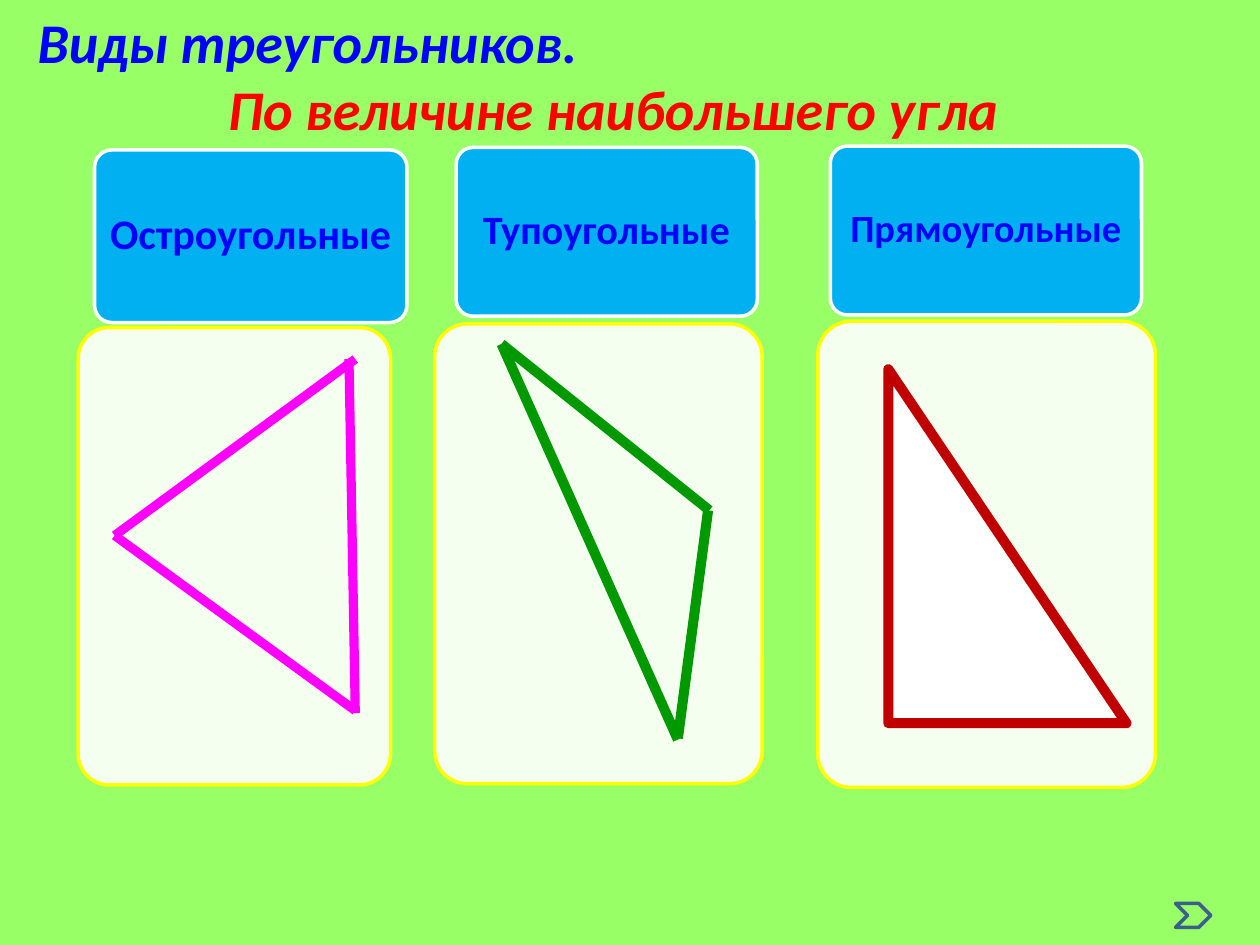
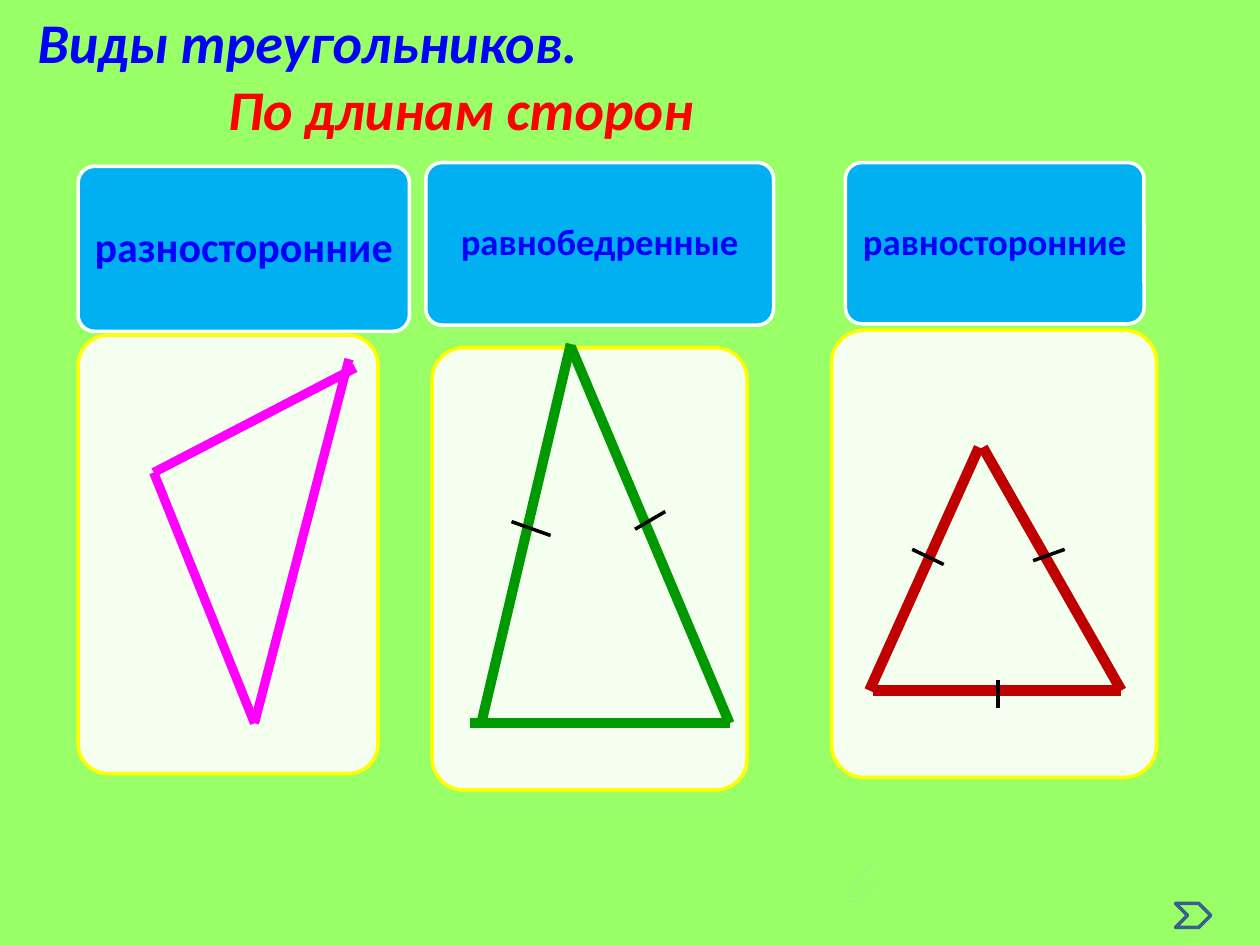
from pptx import Presentation
from pptx.dml.color import RGBColor
from pptx.enum.shapes import MSO_CONNECTOR, MSO_SHAPE
from pptx.enum.text import MSO_ANCHOR, PP_ALIGN
from pptx.oxml.ns import qn
from pptx.util import Inches, Pt
from lxml.etree import SubElement

COLORS = {
    "background": "99FF66",
    "white": "FFFFFF",
    "label": "00B0F0",
    "text": "0000FF",
    "subtitle": "FF0000",
    "frame": "FFFF00",
    "magenta": "FF00FF",
    "green": "009900",
    "crimson": "C00000",
    "black": "000000",
    "chevron": "3A5F8C",
    "arc": "B3C1DB",
}
FONT = "Calibri"


def color(name):
    return RGBColor.from_string(COLORS[name])


class Lesson:
    def __init__(self):
        self.deck = Presentation()
        self.deck.slide_width = Inches(10)
        self.deck.slide_height = Inches(7.5)
        self.page = None

    def add_page(self):
        self.page = self.deck.slides.add_slide(self.deck.slide_layouts[6])
        background = self.page.background.fill
        background.solid()
        background.fore_color.rgb = color("background")

    def add_title(self, subtitle):
        box = self.page.shapes.add_textbox(*map(Inches, (0.2, 0.01, 7.9, 1.18)))
        frame = box.text_frame
        frame.word_wrap = True
        heading, second = frame.paragraphs[0], frame.add_paragraph()
        self.set_text(heading, "Виды треугольников.", 32, "text", italic=True)
        self.set_text(second, subtitle, 32, "subtitle", italic=True)
        second._p.get_or_add_pPr().set("marL", str(Inches(1.51)))

    def set_text(self, para, text, size, ink, italic=False):
        para.text = text
        para.font.name = FONT
        para.font.size = Pt(size)
        para.font.bold = True
        para.font.italic = italic
        para.font.color.rgb = color(ink)

    def add_shape(self, kind, at, fill=None, line=None, width=2):
        shape = self.page.shapes.add_shape(kind, *map(Inches, at))
        shape.shadow.inherit = False
        if fill:
            shape.fill.solid()
            shape.fill.fore_color.rgb = color(fill)
        else:
            shape.fill.background()
        if line:
            shape.line.color.rgb = color(line)
            shape.line.width = Pt(width)
        else:
            shape.line.fill.background()
        return shape

    def add_card(self, at):
        card = self.add_shape(MSO_SHAPE.ROUNDED_RECTANGLE, at, "white", "frame")
        card.adjustments[0] = 0.1
        fill = card._element.spPr.find(qn("a:solidFill"))
        SubElement(fill[0], qn("a:alpha"), val="90000")

    def add_label(self, at, text, size):
        label = self.add_shape(MSO_SHAPE.ROUNDED_RECTANGLE, at, "label", "white")
        label.adjustments[0] = 0.1
        frame = label.text_frame
        frame.word_wrap = True
        frame.vertical_anchor = MSO_ANCHOR.MIDDLE
        frame.margin_left = frame.margin_right = Inches(0.05)
        frame.margin_top = frame.margin_bottom = Inches(0.03)
        para = frame.paragraphs[0]
        para.alignment = PP_ALIGN.CENTER
        para.line_spacing = 0.9
        self.set_text(para, text, size, "text")

    def add_lines(self, ink, width, lines):
        for ends in lines:
            line = self.page.shapes.add_connector(MSO_CONNECTOR.STRAIGHT, *map(Inches, ends))
            line.line.color.rgb = color(ink)
            line.line.width = Pt(width)
            SubElement(line._element.spPr, qn("a:effectLst"))

    def add_next_chevron(self):
        self.add_shape(MSO_SHAPE.CHEVRON, (9.33, 7.17, 0.28, 0.19), line="chevron")

    def add_arc(self):
        arc = self.add_shape(MSO_SHAPE.LEFT_CIRCULAR_ARROW, (6.84, 6.72, 0.12, 0.5), "arc")
        for index, value in enumerate((0.01, 1.215, 2.034, 146.759, 0.012)):
            arc.adjustments[index] = value
        arc.rotation = 41.6

    def add_triangle_kinds(self, subtitle, kinds):
        self.add_page()
        for card, label, text, size in kinds:
            self.add_card(card)
            self.add_label(label, text, size)
        self.add_title(subtitle)
        self.add_next_chevron()


def build_angles(lesson):
    lesson.add_triangle_kinds("По величине наибольшего угла", [
        ((0.62, 2.6, 2.48, 3.63), (0.75, 1.19, 2.48, 1.37), "Остроугольные", 24),
        ((3.45, 2.57, 2.6, 3.65), (3.62, 1.17, 2.39, 1.34), "Тупоугольные", 23),
        ((6.49, 2.55, 2.68, 3.7), (6.59, 1.16, 2.47, 1.34), "Прямоугольные", 22),
    ])
    lesson.add_lines("magenta", 5.25, [
        (0.91, 4.25, 2.82, 5.64), (2.77, 2.85, 2.82, 5.66), (0.91, 4.25, 2.82, 2.85),
    ])
    lesson.add_lines("green", 5.75, [
        (3.98, 2.73, 5.38, 5.87), (3.98, 2.73, 5.63, 4.05), (5.62, 4.05, 5.38, 5.86),
    ])
    lesson.add_shape(MSO_SHAPE.RIGHT_TRIANGLE, (7.05, 2.93, 1.89, 2.81), "white", "crimson", 5.75)


def build_sides(lesson):
    lesson.add_triangle_kinds("По длинам сторон", [
        ((0.62, 2.66, 2.38, 3.48), (0.62, 1.32, 2.63, 1.31), "разносторонние", 24),
        ((3.43, 2.76, 2.5, 3.51), (3.38, 1.29, 2.76, 1.29), "равнобедренные", 21),
        ((6.6, 2.62, 2.58, 3.55), (6.71, 1.29, 2.37, 1.28), "равносторонние", 21),
    ])
    lesson.add_arc()
    lesson.add_lines("magenta", 5.25, [
        (1.22, 3.75, 2.02, 5.74), (2.77, 2.85, 2.02, 5.74), (1.22, 3.75, 2.82, 2.92),
    ])
    lesson.add_lines("green", 5.75, [
        (4.53, 2.73, 3.82, 5.74), (4.53, 2.75, 5.79, 5.74), (5.79, 5.74, 3.73, 5.74),
    ])
    lesson.add_lines("crimson", 6, [
        (7.77, 3.55, 6.9, 5.48), (7.8, 3.55, 8.9, 5.48), (6.93, 5.48, 8.9, 5.48),
    ])
    lesson.add_lines("black", 2, [
        (4.06, 4.14, 4.37, 4.25), (5.04, 4.2, 5.28, 4.06),
        (7.24, 4.36, 7.49, 4.48), (8.2, 4.45, 8.45, 4.36), (7.92, 5.4, 7.92, 5.62),
    ])


def main():
    lesson = Lesson()
    build_angles(lesson)
    build_sides(lesson)
    lesson.deck.save("out.pptx")


if __name__ == "__main__":
    main()
